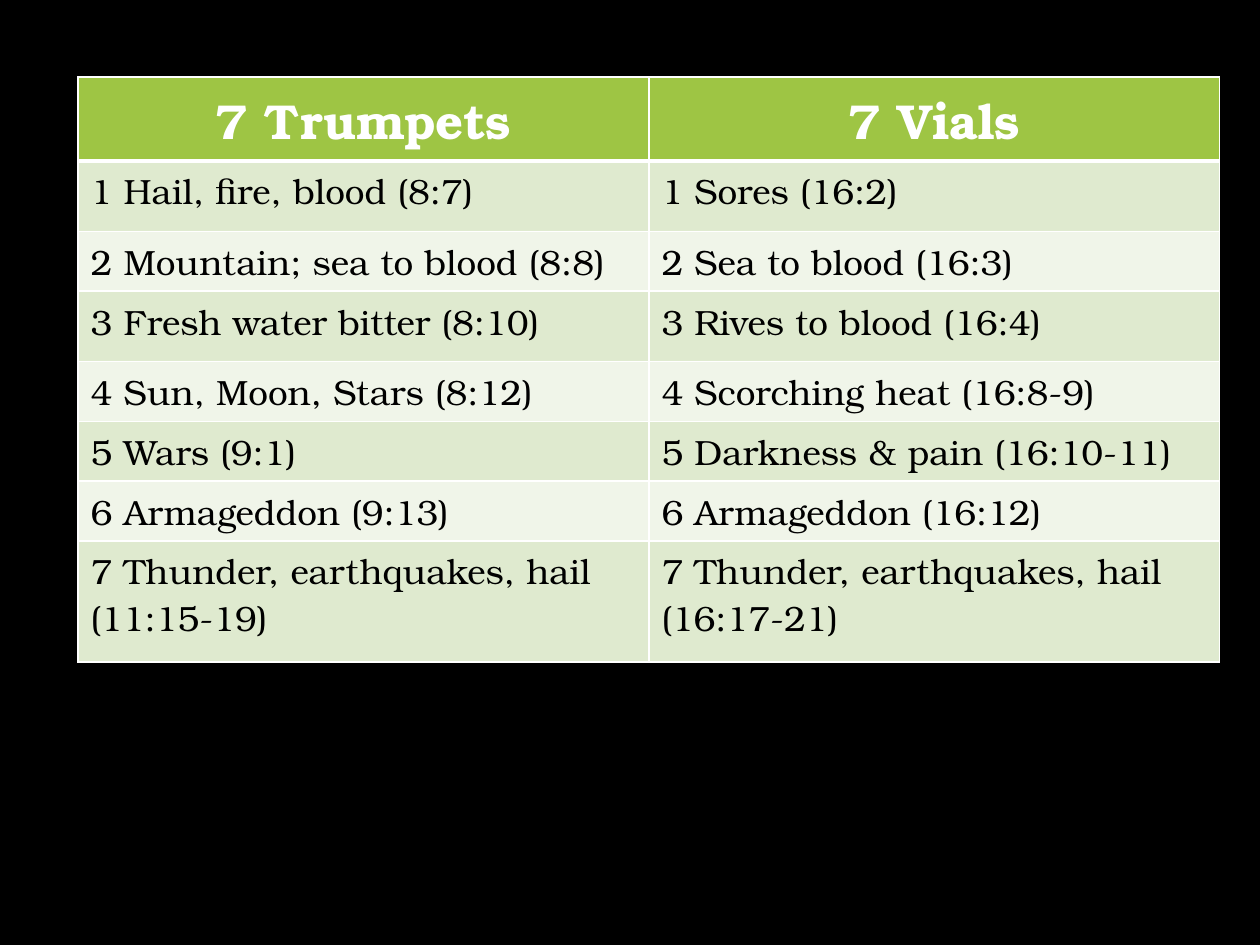
from dataclasses import dataclass
from pptx import Presentation
from pptx import util as u
from pptx.dml.color import RGBColor
from pptx.enum import text
from pptx.oxml import parse_xml
from pptx.oxml.ns import nsdecls


@dataclass(frozen=True)
class Theme:
    font: str = "TeX Gyre Bonum"
    back: str = "000000"
    head: str = "9EC544"
    bands: tuple = ("DFEACF", "F0F5E9")
    light: str = "FFFFFF"
    dark: str = "000000"
    head_size: int = 28
    body_size: int = 20


THEME = Theme()
HEADS = ("7 Trumpets", "7 Vials")
PAIRS = [
    ("1 Hail, fire, blood (8:7)", "1 Sores (16:2)"),
    ("2 Mountain; sea to blood (8:8)", "2 Sea to blood (16:3)"),
    ("3 Fresh water bitter (8:10)", "3 Rives to blood (16:4)"),
    ("4 Sun, Moon, Stars (8:12)", "4 Scorching heat (16:8-9)"),
    ("5 Wars (9:1)", "5 Darkness & pain (16:10-11)"),
    ("6 Armageddon (9:13)", "6 Armageddon (16:12)"),
    ("7 Thunder, earthquakes, hail (11:15-19)",
     "7 Thunder, earthquakes, hail (16:17-21)"),
]
# Row heights as shares of the table height
TALL, LOW = 0.56, 0.47
ROWS = (0.66, TALL, LOW, TALL, LOW, LOW, LOW, 0.96)


def rgb(code):
    return RGBColor.from_string(code)


def edge(cell, side, width):
    """Draw one border of a cell; borders must precede the fill."""
    props = cell._tc.get_or_add_tcPr()
    props.append(parse_xml(
        f'<a:{side} {nsdecls("a")} w="{u.Pt(width)}"><a:solidFill>'
        f'<a:srgbClr val="{THEME.light}"/></a:solidFill></a:{side}>'))


def style(cell, words, row):
    """Fill one cell with its words, borders and colours."""
    head = row == 0
    for side in ("lnL", "lnR", "lnT", "lnB"):
        thick = (head and side == "lnB") or (row == 1 and side == "lnT")
        edge(cell, side, 3 if thick else 1)
    cell.fill.solid()
    cell.fill.fore_color.rgb = rgb(
        THEME.head if head else THEME.bands[(row - 1) % 2])
    cell.text_frame.text = words
    par = cell.text_frame.paragraphs[0]
    if head:
        par.alignment = text.PP_ALIGN.CENTER
        cell.vertical_anchor = text.MSO_ANCHOR.BOTTOM
    font = par.runs[0].font
    font.name = THEME.font
    font.bold = head
    font.size = u.Pt(THEME.head_size if head else THEME.body_size)
    font.color.rgb = rgb(THEME.light if head else THEME.dark)


def compare(slide, left, top, width, height):
    """Place the two-column comparison in the given box."""
    data = [HEADS, *PAIRS]
    table = slide.shapes.add_table(
        len(data), len(HEADS), left, top, width, height).table
    for col in table.columns:
        col.width = width // len(HEADS)
    for r, line in enumerate(data):
        table.rows[r].height = int(height * ROWS[r] / sum(ROWS))
        for c, words in enumerate(line):
            style(table.cell(r, c), words, r)


def main():
    deck = Presentation()
    deck.slide_width, deck.slide_height = u.Inches(10), u.Inches(7.5)
    slide = deck.slides.add_slide(deck.slide_layouts[6])
    # Black background
    slide.background.fill.solid()
    slide.background.fill.fore_color.rgb = rgb(THEME.back)
    # Comparison table
    compare(slide, u.Inches(0.62), u.Inches(0.61),
            u.Inches(9.06), u.Inches(sum(ROWS)))
    deck.save("out.pptx")


if __name__ == "__main__":
    main()
